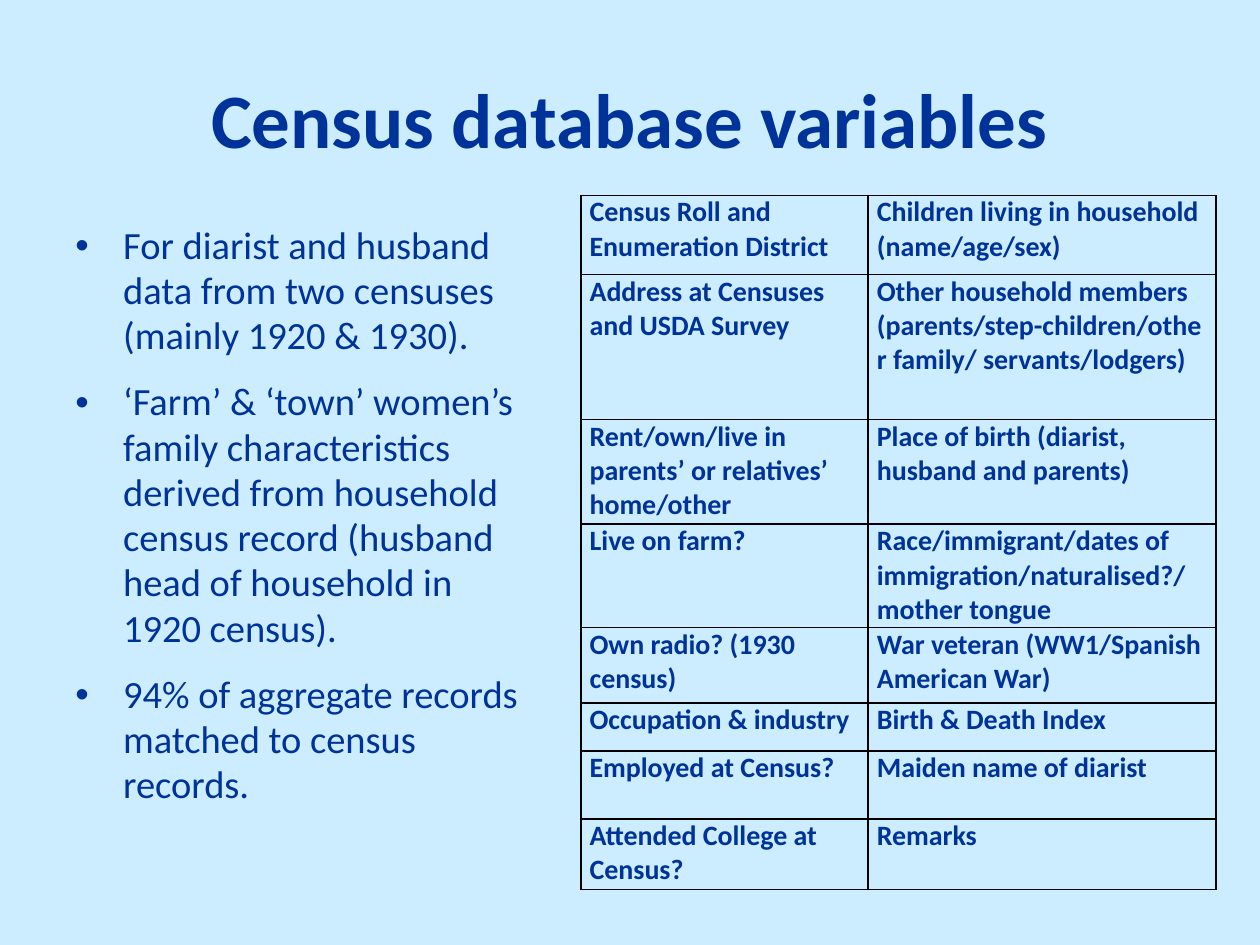
from dataclasses import dataclass
from lxml.etree import SubElement
from pptx import Presentation
from pptx.dml.color import RGBColor
from pptx.enum.text import MSO_ANCHOR, PP_ALIGN
from pptx.oxml.ns import qn
from pptx.util import Inches, Pt


@dataclass(frozen=True)
class Theme:
    back: RGBColor = RGBColor(0xCC, 0xEC, 0xFF)
    ink: RGBColor = RGBColor(0x00, 0x33, 0x99)
    rule: str = "000000"
    face: str = "Calibri"
    title: int = 44
    body: int = 22
    cell: int = 16


THEME = Theme()

POINTS = [
    "For diarist and husband data from two censuses (mainly 1920 & 1930).",
    "‘Farm’ & ‘town’ women’s family characteristics derived from household "
    "census record (husband head of household in 1920 census).",
    "94% of aggregate records matched to census records.",
]

ROWS = [
    (0.63, "Census Roll and Enumeration District",
     "Children living in household (name/age/sex)"),
    (1.15, "Address at Censuses and USDA Survey",
     "Other household members (parents/step-children/other family/ servants/lodgers)"),
    (0.83, "Rent/own/live in parents’ or relatives’ home/other",
     "Place of birth (diarist, husband and parents)"),
    (0.82, "Live on farm?",
     "Race/immigrant/dates of immigration/naturalised?/mother tongue"),
    (0.6, "Own radio? (1930 census)", "War veteran (WW1/Spanish American War)"),
    (0.38, "Occupation & industry", "Birth & Death Index"),
    (0.54, "Employed at Census?", "Maiden name of diarist"),
    (0.56, "Attended College at Census?", "Remarks"),
]
WIDTHS = (2.28, 2.76)


def style(para, size, bold=False):
    for run in para.runs:
        font = run.font
        font.name, font.size, font.bold = THEME.face, Pt(size), bold
        font.color.rgb = THEME.ink


def add_box(slide, left, top, width, height):
    box = slide.shapes.add_textbox(
        Inches(left), Inches(top), Inches(width), Inches(height))
    box.text_frame.word_wrap = True
    return box.text_frame


def add_title(slide, text):
    frame = add_box(slide, 0.5, 0.28, 9, 1.31)
    frame.vertical_anchor = MSO_ANCHOR.MIDDLE
    frame.text = text
    para = frame.paragraphs[0]
    para.alignment = PP_ALIGN.CENTER
    style(para, THEME.title, True)


def add_mark(para):
    props = para._p.get_or_add_pPr()
    props.set("marL", str(Inches(0.38)))
    props.set("indent", str(Inches(-0.38)))
    SubElement(props, qn("a:buFont"), typeface="Arial")
    SubElement(props, qn("a:buChar"), char="•")


def add_list(slide, points):
    frame = add_box(slide, 0.5, 1.55, 3.87, 5.35)
    frame.margin_top = Inches(0.22)
    frame.text = "\n".join(points)
    for index, para in enumerate(frame.paragraphs):
        add_mark(para)
        para.line_spacing = 0.98
        if index:
            para.space_before = Pt(12)
        style(para, THEME.body)


def add_edges(cell):
    props = cell._tc.get_or_add_tcPr()
    for place, side in enumerate(("lnL", "lnR", "lnT", "lnB")):
        line = SubElement(props, qn(f"a:{side}"), w=str(Pt(1)))
        fill = SubElement(line, qn("a:solidFill"))
        SubElement(fill, qn("a:srgbClr"), val=THEME.rule)
        props.insert(place, line)


def fill_cell(cell, text):
    cell.margin_left = cell.margin_right = Inches(0.07)
    cell.margin_top = cell.margin_bottom = 0
    cell.fill.background()
    cell.text_frame.text = text
    style(cell.text_frame.paragraphs[0], THEME.cell, True)
    add_edges(cell)


def add_grid(slide, rows, widths):
    high = sum(row[0] for row in rows)
    table = slide.shapes.add_table(
        len(rows), len(widths), Inches(4.61), Inches(1.55),
        Inches(sum(widths)), Inches(high)).table
    table.first_row = table.horz_banding = False
    for column, width in zip(table.columns, widths):
        column.width = Inches(width)
    for row, (height, *texts) in zip(table.rows, rows):
        row.height = Inches(height)
        for cell, text in zip(row.cells, texts):
            fill_cell(cell, text)


def main():
    deck = Presentation()
    deck.slide_width, deck.slide_height = Inches(10), Inches(7.5)
    slide = deck.slides.add_slide(deck.slide_layouts[6])
    slide.background.fill.solid()
    slide.background.fill.fore_color.rgb = THEME.back
    add_title(slide, "Census database variables")
    add_list(slide, POINTS)
    add_grid(slide, ROWS, WIDTHS)
    deck.save("out.pptx")


if __name__ == "__main__":
    main()
